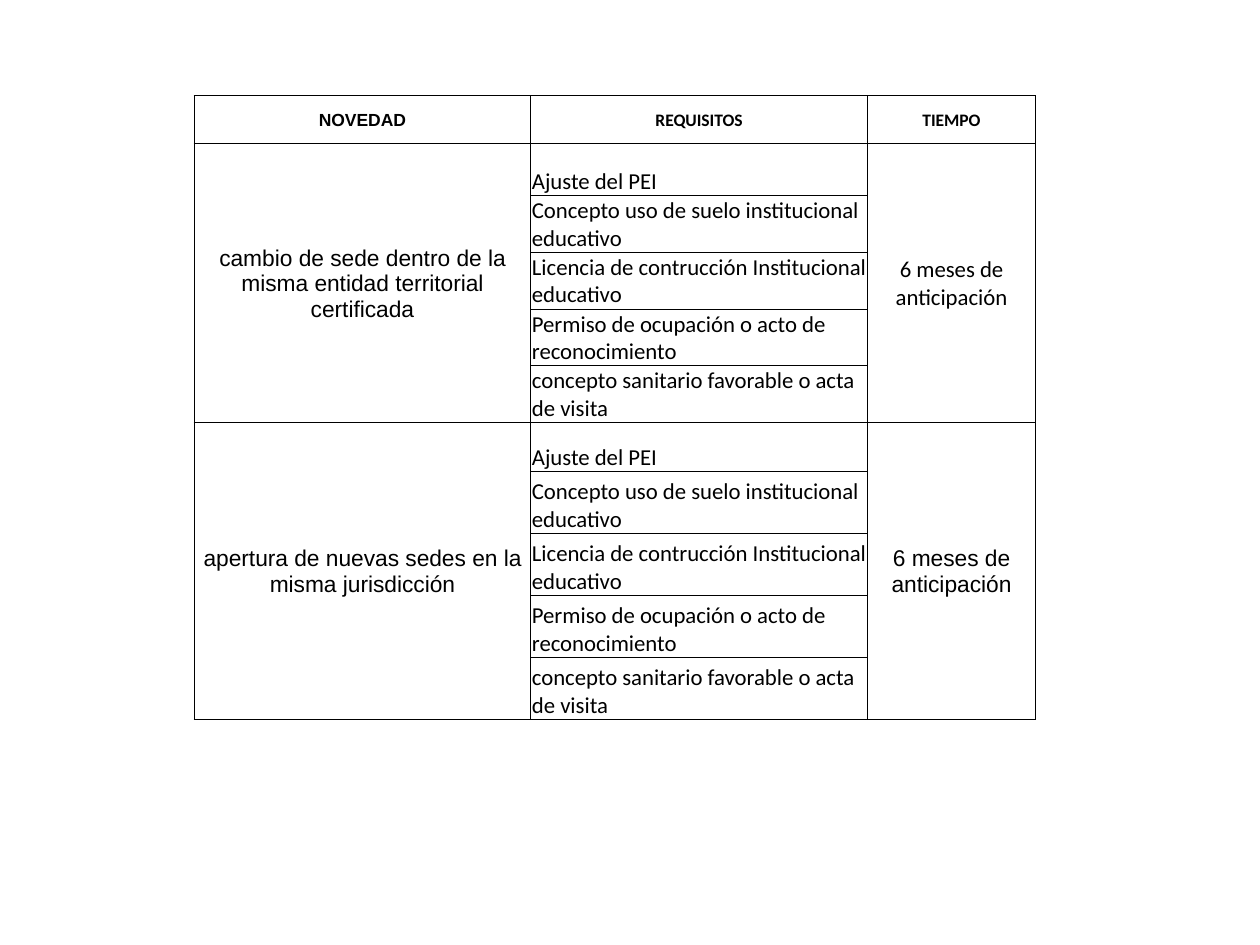
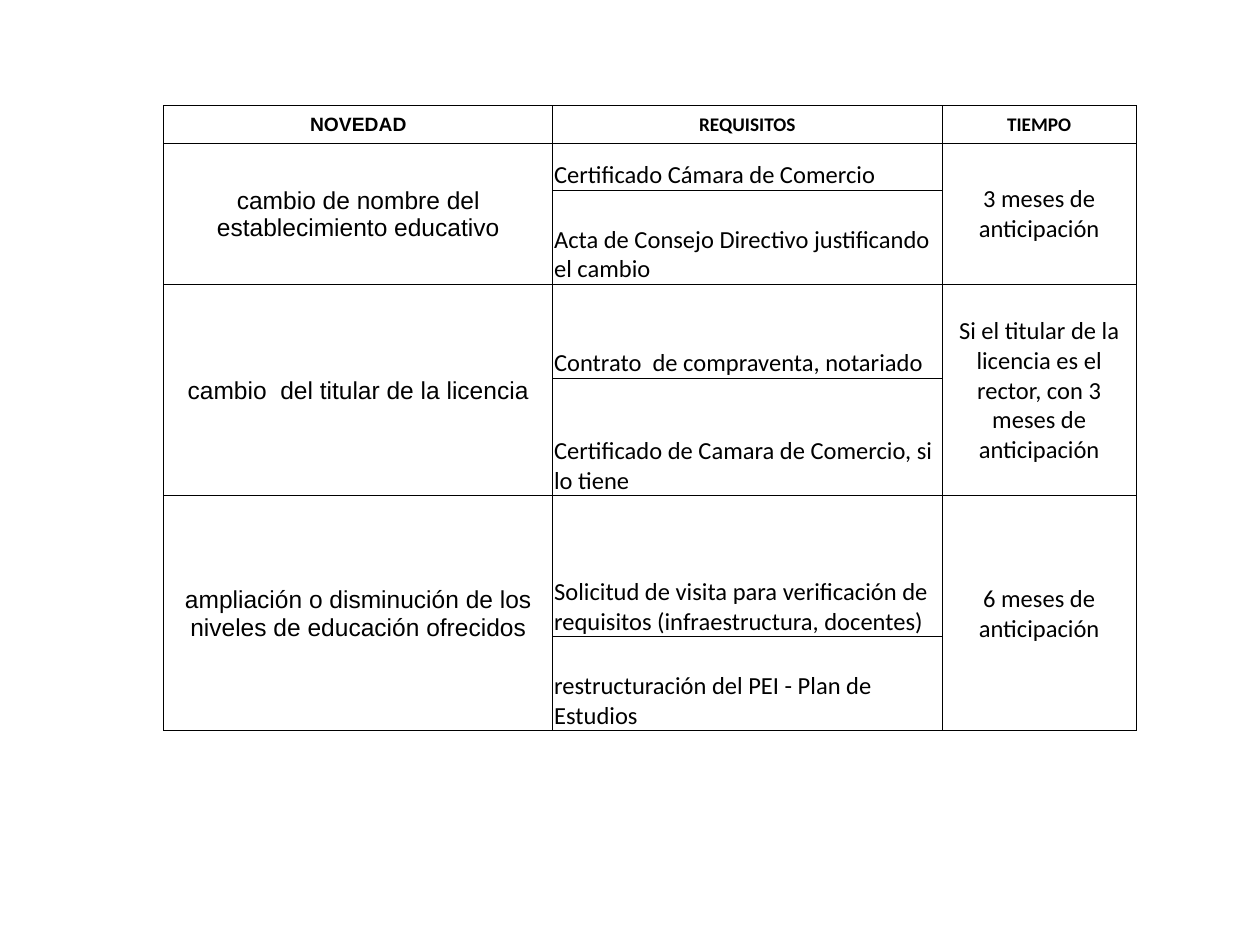
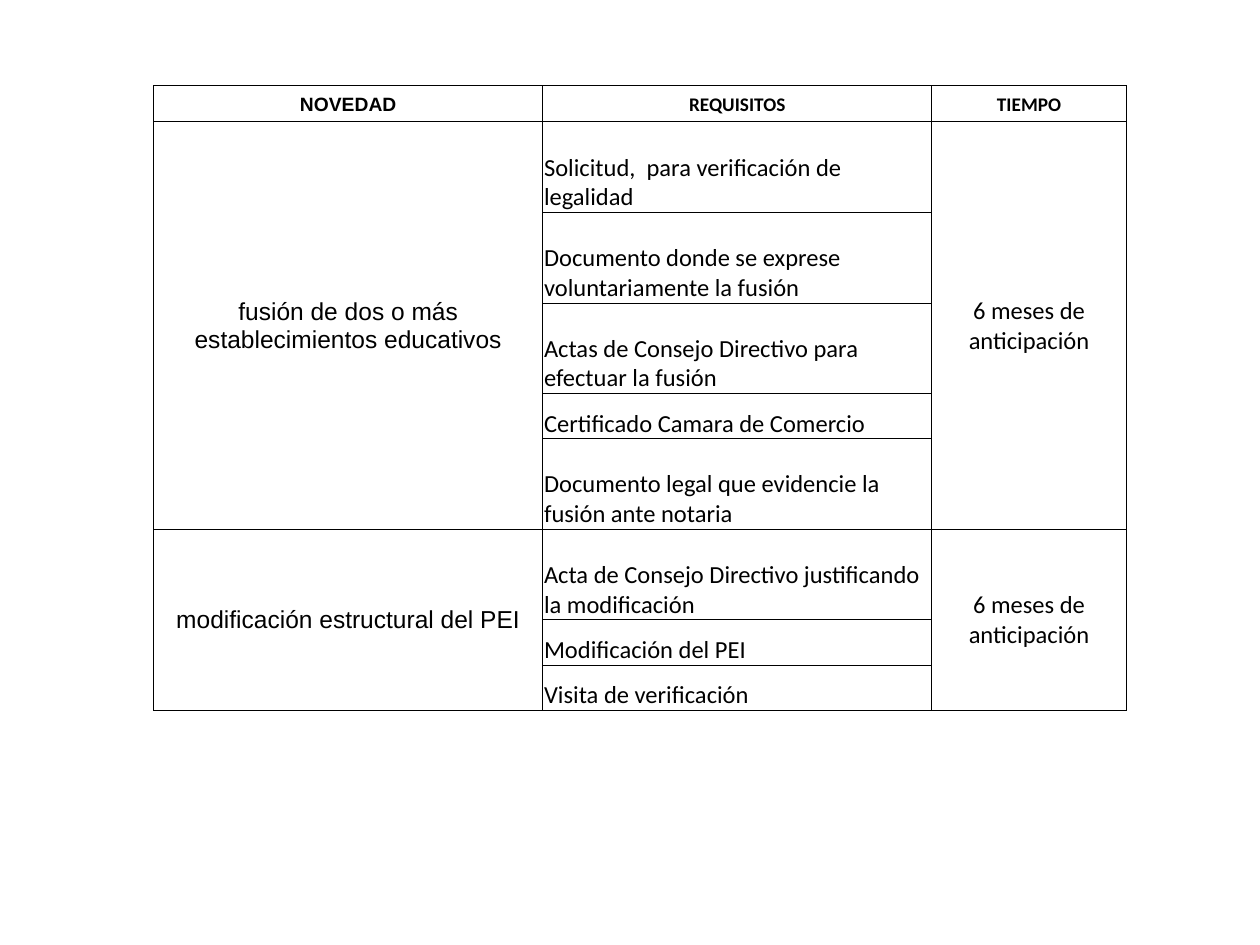
from pptx import Presentation
from pptx.dml.color import RGBColor
from pptx.enum.text import MSO_ANCHOR as Anchor, PP_ALIGN as Align
from pptx.oxml.ns import qn
from pptx.util import Inches, Pt
from lxml.etree import SubElement

COLORS = {"text": "000000", "border": "000000"}
HEADING_FONT, BODY_FONT = "Arial", "Calibri"
SLIDE_WIDTH, SLIDE_HEIGHT = 10, 7.5
COLUMN_SHARES = (0.4, 0.4, 0.2)
HEADERS = (("NOVEDAD", HEADING_FONT), ("REQUISITOS", BODY_FONT), ("TIEMPO", BODY_FONT))
BORDER_WIDTH = 0.5
CELL_MARGIN = 0.01
SIX_MONTHS = "6 meses de anticipación"

SITE_REQUIREMENTS = (
    "Ajuste del PEI",
    "Concepto uso de suelo institucional educativo",
    "Licencia de contrucción Institucional educativo",
    "Permiso de ocupación o acto de reconocimiento",
    "concepto sanitario favorable o acta de visita",
)

# Each group: change, its requirements, lead time, font of the lead time.
# Row weights share out the height of the box (left, top, width, height).
SLIDES = (
    {
        "box": (1.54, 0.76, 6.68, 4.95),
        "row_weights": (38, 41, 45, 45, 45, 45, 39, 49, 49, 49, 49),
        "header_size": 10,
        "body_size": 13,
        "groups": (
            ("cambio de sede dentro de la misma entidad territorial certificada",
             SITE_REQUIREMENTS, SIX_MONTHS, BODY_FONT),
            ("apertura de nuevas sedes en la misma jurisdicción",
             SITE_REQUIREMENTS, SIX_MONTHS, HEADING_FONT),
        ),
    },
    {
        "box": (1.3, 0.84, 7.72, 4.96),
        "row_weights": (0.8, 1, 2, 2, 2.5, 3, 2),
        "header_size": 11,
        "body_size": 14,
        "groups": (
            ("cambio de nombre del establecimiento educativo",
             ("Certificado Cámara de Comercio",
              "Acta de Consejo Directivo justificando el cambio"),
             "3 meses de anticipación", BODY_FONT),
            ("cambio  del titular de la licencia",
             ("Contrato  de compraventa, notariado",
              "Certificado de Camara de Comercio, si lo tiene"),
             "Si el titular de la licencia es el rector, con 3 meses de anticipación",
             BODY_FONT),
            ("ampliación o disminución de los niveles de educación ofrecidos",
             ("Solicitud de visita para verificación de requisitos"
              " (infraestructura, docentes)",
              "restructuración del PEI - Plan de Estudios"),
             SIX_MONTHS, BODY_FONT),
        ),
    },
    {
        "box": (1.22, 0.68, 7.72, 4.96),
        "row_weights": (0.8, 2, 2, 2, 1, 2, 2, 1, 1),
        "header_size": 11,
        "body_size": 14,
        "groups": (
            ("fusión de dos o más establecimientos educativos",
             ("Solicitud,  para verificación de legalidad",
              "Documento donde se exprese voluntariamente la fusión",
              "Actas de Consejo Directivo para efectuar la fusión",
              "Certificado Camara de Comercio",
              "Documento legal que evidencie la fusión ante notaria"),
             SIX_MONTHS, BODY_FONT),
            ("modificación estructural del PEI",
             ("Acta de Consejo Directivo justificando la modificación",
              "Modificación del PEI",
              "Visita de verificación"),
             SIX_MONTHS, BODY_FONT),
        ),
    },
)


def write_text(cell, text, *, font, size, bold=False, align=Align.CENTER, anchor=Anchor.MIDDLE):
    cell.vertical_anchor = anchor
    paragraph = cell.text_frame.paragraphs[0]
    paragraph.alignment = align
    run = paragraph.add_run()
    run.text = text
    run.font.name = font
    run.font.size = Pt(size)
    run.font.bold = bold
    run.font.color.rgb = RGBColor.from_string(COLORS["text"])


def style_cell(cell):
    """Give the cell thin borders, tight margins and no fill."""
    cell.margin_left = cell.margin_right = cell.margin_top = Inches(CELL_MARGIN)
    cell.margin_bottom = 0
    properties = cell._tc.get_or_add_tcPr()
    for side in ("a:lnL", "a:lnR", "a:lnT", "a:lnB"):
        line = SubElement(properties, qn(side), w=str(Pt(BORDER_WIDTH)))
        fill = SubElement(line, qn("a:solidFill"))
        SubElement(fill, qn("a:srgbClr"), val=COLORS["border"])
    cell.fill.background()


def add_grid(slide, box, row_weights):
    left, top, width, height = box
    table = slide.shapes.add_table(
        len(row_weights), len(COLUMN_SHARES), *(Inches(length) for length in box)
    ).table
    table.first_row = table.horz_banding = False
    for column, share in zip(table.columns, COLUMN_SHARES):
        column.width = Inches(width * share)
    for row, weight in zip(table.rows, row_weights):
        row.height = Inches(height * weight / sum(row_weights))
    for cell in table.iter_cells():
        style_cell(cell)
    return table


def fill_group(table, first_row, group, size):
    """Write one change with its requirements and return the next free row."""
    change, requirements, lead_time, time_font = group
    last_row = first_row + len(requirements) - 1
    for column, text, font in ((0, change, HEADING_FONT), (2, lead_time, time_font)):
        cell = table.cell(first_row, column)
        cell.merge(table.cell(last_row, column))
        write_text(cell, text, font=font, size=size)
    for row, requirement in enumerate(requirements, first_row):
        write_text(table.cell(row, 1), requirement, font=BODY_FONT, size=size,
                   align=Align.LEFT, anchor=Anchor.BOTTOM)
    return last_row + 1


def add_requirements_slide(presentation, *, box, row_weights, header_size, body_size, groups):
    slide = presentation.slides.add_slide(presentation.slide_layouts[6])
    table = add_grid(slide, box, row_weights)
    for column, (header, font) in enumerate(HEADERS):
        write_text(table.cell(0, column), header, font=font, size=header_size, bold=True)
    row = 1
    for group in groups:
        row = fill_group(table, row, group, body_size)


def main():
    presentation = Presentation()
    presentation.slide_width = Inches(SLIDE_WIDTH)
    presentation.slide_height = Inches(SLIDE_HEIGHT)
    for content in SLIDES:
        add_requirements_slide(presentation, **content)
    presentation.save("out.pptx")


if __name__ == "__main__":
    main()
